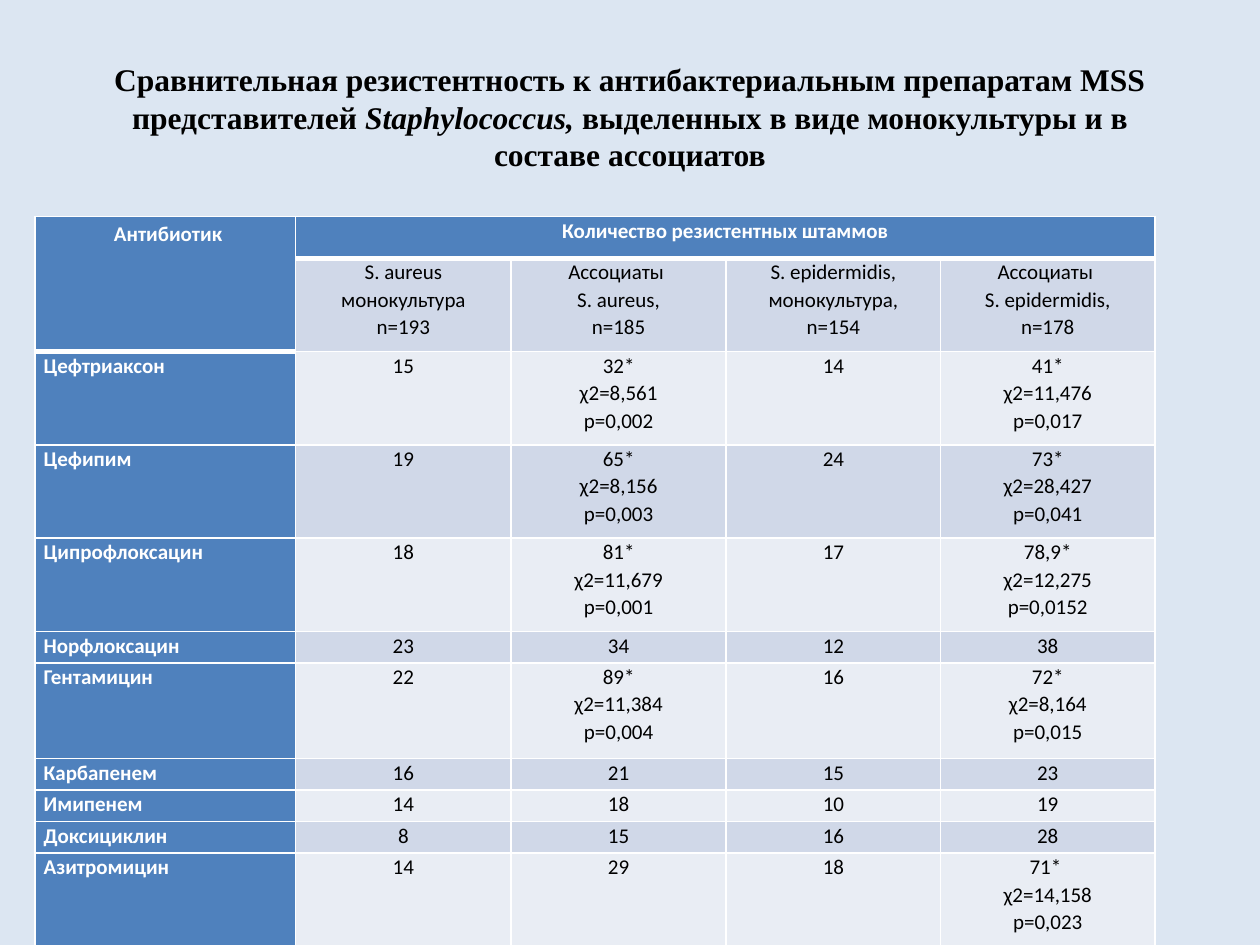
import pptx
import pptx.util
import pptx.dml.color
import pptx.enum.text
import pptx.oxml
import pptx.oxml.ns

Pt = pptx.util.Pt
ALIGN = pptx.enum.text.PP_ALIGN
ANCHOR = pptx.enum.text.MSO_ANCHOR

COLORS = {
    "background": "DCE6F2",
    "header": "4F81BD",
    "dark band": "D0D8E8",
    "light band": "E9EDF4",
    "light text": "FFFFFF",
    "dark text": "000000",
    "border": "FFFFFF",
}
TITLE = [
    ("Сравнительная резистентность к антибактериальным препаратам MSS представителей ", False),
    ("Staphylococcus, ", True),
    ("выделенных в виде монокультуры и в составе ассоциатов", False),
]
ROWS = [
    ["", "Количество резистентных штаммов", "", "", ""],
    ["", "S. aureus монокультура\nn=193", "Ассоциаты \nS. aureus,\nn=185",
     "S. epidermidis,\nмонокультура,\nn=154", "Ассоциаты \nS. epidermidis,\nn=178"],
    ["Цефтриаксон", "15", "32*\nχ2=8,561\np=0,002", "14", "41*\nχ2=11,476\np=0,017"],
    ["Цефипим", "19", "65*\nχ2=8,156\np=0,003", "24", "73*\nχ2=28,427\np=0,041"],
    ["Ципрофлоксацин", "18", "81*\nχ2=11,679\np=0,001", "17", "78,9*\nχ2=12,275\np=0,0152"],
    ["Норфлоксацин", "23", "34", "12", "38"],
    ["Гентамицин", "22", "89*\nχ2=11,384\np=0,004", "16", "72*\nχ2=8,164\np=0,015"],
    ["Карбапенем", "16", "21", "15", "23"],
    ["Имипенем", "14", "18", "10", "19"],
    ["Доксициклин", "8", "15", "16", "28"],
    ["Азитромицин", "14", "29", "18", "71* \nχ2=14,158\np=0,023"],
]
COLUMN_WIDTHS = [149, 123, 123, 122.5, 122.5]
ROW_HEIGHTS = [24, 53.3, 53.3, 53.3, 53.3, 18, 54.7, 18, 18, 18, 53.3]


def rgb(name):
    return pptx.dml.color.RGBColor.from_string(COLORS[name])


def format_span(span, font, size, color, bold, italic=False):
    span.font.name = font
    span.font.size = Pt(size)
    span.font.color.rgb = rgb(color)
    span.font.bold = bold
    span.font.italic = italic


def add_title(page):
    box = page.shapes.title
    box.left, box.top, box.width, box.height = Pt(36), Pt(21.6), Pt(648), Pt(90)
    box.text_frame.vertical_anchor = ANCHOR.MIDDLE
    para = box.text_frame.paragraphs[0]
    para.alignment = ALIGN.CENTER
    for words, italic in TITLE:
        span = para.add_run()
        span.text = words
        format_span(span, "Times New Roman", 18, "dark text", True, italic)


def set_borders(cell, top, bottom):
    """Draw all four sides, 1 pt at left and right."""
    properties = cell._tc.get_or_add_tcPr()
    for side, width in (("L", 1), ("R", 1), ("T", top), ("B", bottom)):
        properties.append(pptx.oxml.parse_xml(
            f'<a:ln{side} {pptx.oxml.ns.nsdecls("a")} w="{Pt(width)}"><a:solidFill>'
            f'<a:srgbClr val="{COLORS["border"]}"/></a:solidFill></a:ln{side}>'))


def fill_cell(cell, words, fill, is_header, alignment):
    cell.margin_left = cell.margin_right = Pt(4.94)
    cell.margin_top = cell.margin_bottom = 0
    cell.fill.solid()
    cell.fill.fore_color.rgb = rgb(fill)
    cell.text_frame.text = words
    for para in cell.text_frame.paragraphs:
        para.alignment = alignment
        para.line_spacing = 1.07
        for span in para.runs:
            format_span(span, "Calibri", 12, "light text" if is_header else "dark text", is_header)


def add_corner_heading(cell):
    """The first heading sits lower because a larger space leads it."""
    para = cell.text_frame.paragraphs[0]
    for words, size in ((" ", 14), ("Антибиотик", 12)):
        span = para.add_run()
        span.text = words
        format_span(span, "Calibri", size, "light text", True)


def add_resistance_table(page):
    frame = page.shapes.add_table(len(ROWS), len(COLUMN_WIDTHS), Pt(20), Pt(123.6),
                                  Pt(sum(COLUMN_WIDTHS)), Pt(sum(ROW_HEIGHTS)))
    table = frame.table
    for column, width in zip(table.columns, COLUMN_WIDTHS):
        column.width = Pt(width)
    for row, height in zip(table.rows, ROW_HEIGHTS):
        row.height = Pt(height)

    for r, row in enumerate(ROWS):
        for c, words in enumerate(row):
            is_header = r == 0 or c == 0
            band = "dark band" if r % 2 else "light band"
            last_header_row = 1 if c == 0 else 0
            cell = table.cell(r, c)
            set_borders(cell, top=3 if r == last_header_row + 1 else 1,
                        bottom=3 if r <= last_header_row else 1)
            fill_cell(cell, words, "header" if is_header else band, is_header,
                      ALIGN.LEFT if c == 0 and r > 1 else ALIGN.CENTER)

    table.cell(0, 0).merge(table.cell(1, 0))
    table.cell(0, 1).merge(table.cell(0, 4))
    add_corner_heading(table.cell(0, 0))


def main():
    deck = pptx.Presentation()
    deck.slide_width, deck.slide_height = Pt(720), Pt(540)
    page = deck.slides.add_slide(deck.slide_layouts[5])
    page.background.fill.solid()
    page.background.fill.fore_color.rgb = rgb("background")
    add_title(page)
    add_resistance_table(page)
    deck.save("out.pptx")


if __name__ == "__main__":
    main()
